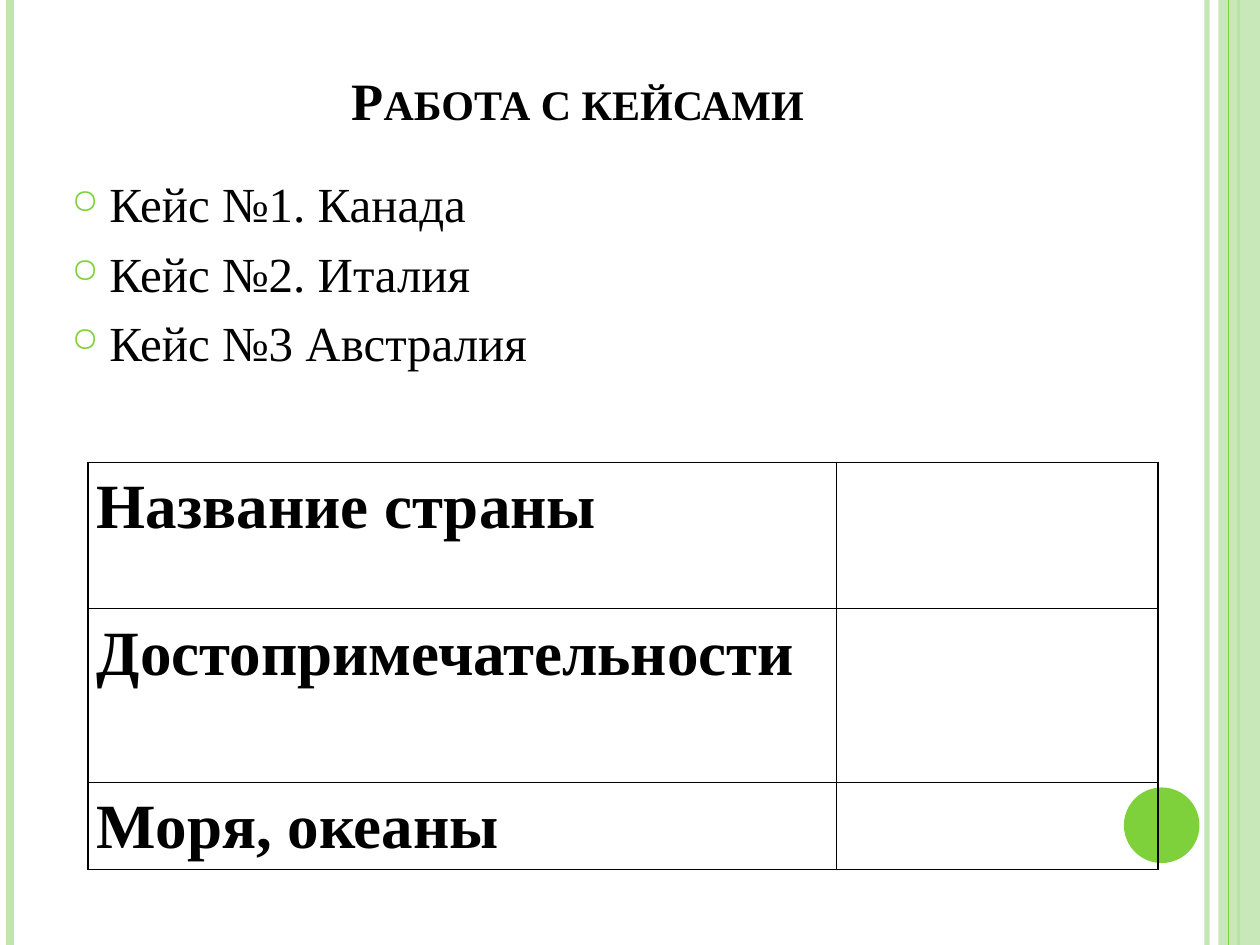
from lxml.etree import SubElement
from pptx import Presentation
from pptx.dml.color import RGBColor
from pptx.enum.shapes import MSO_CONNECTOR as Connector, MSO_SHAPE as Shape
from pptx.enum.text import MSO_ANCHOR as Anchor, PP_ALIGN as Align
from pptx.oxml.ns import qn
from pptx.util import Inches, Pt

WIDTH, HEIGHT = Inches(10), Inches(7.5)
BLACK = RGBColor(0x00, 0x00, 0x00)
GREEN = RGBColor(0x7F, 0xD1, 0x3B)
PALE = RGBColor(0xC0, 0xE5, 0xAF)
FONT = "Times New Roman"
CASES = ["Кейс №1. Канада", "Кейс №2. Италия", "Кейс №3 Австралия"]
ROWS = [("Название страны", 1.16), ("Достопримечательности", 1.38), ("Моря, океаны", 0.69)]
COLUMNS = [5.94, 2.55]


def apply(target, formats):
    """Set each attribute in formats on the target."""
    for name, value in formats.items():
        setattr(target, name, value)


def add_node(parent, tag, **values):
    """Append a DrawingML element with the given attributes."""
    node = SubElement(parent, qn(f"a:{tag}"))
    for name, value in values.items():
        node.set(name, str(value))
    return node


def set_alpha(shape, percent):
    """Make the first colour of a shape partly transparent."""
    colour = next(shape._element.spPr.iter(qn("a:srgbClr")))
    add_node(colour, "alpha", val=percent * 1000)


def add_stripe(page, share, colour, weight, alpha=100):
    """Draw a full-height vertical line at a share of the width."""
    x = round(WIDTH * share)
    stripe = page.shapes.add_connector(Connector.STRAIGHT, x, 0, x, HEIGHT)
    stripe.line.color.rgb = colour
    stripe.line.width = Pt(weight)
    if alpha < 100:
        set_alpha(stripe, alpha)
    add_node(stripe._element.spPr, "effectLst")


def add_plain(page, kind, left, top, width, height, colour):
    """Draw a filled shape without outline or shadow."""
    shape = page.shapes.add_shape(kind, *map(Inches, (left, top, width, height)))
    shape.shadow.inherit = False
    shape.fill.solid()
    shape.fill.fore_color.rgb = colour
    shape.line.fill.background()
    return shape


def add_box(page, left, top, width, height, anchor):
    """Add a wrapping text box and return its text frame."""
    box = page.shapes.add_textbox(*map(Inches, (left, top, width, height)))
    apply(box.text_frame, {"word_wrap": True, "vertical_anchor": anchor})
    return box.text_frame


def write(para, text, size, bold=False, **formats):
    """Write one formatted run into a paragraph."""
    apply(para, formats)
    span = para.add_run()
    span.text = text
    apply(span.font, {"name": FONT, "size": Pt(size), "bold": bold})
    span.font.color.rgb = BLACK
    return span


def add_bullet(para):
    """Give a paragraph a hanging green ring bullet."""
    props = para._p.get_or_add_pPr()
    props.set("marL", str(Inches(0.3)))
    props.set("indent", str(-Inches(0.3)))
    add_node(add_node(props, "buClr"), "srgbClr", val=GREEN)
    add_node(props, "buSzPct", val=70000)
    add_node(props, "buChar", char="○")


def frame_cell(cell):
    """Outline a cell in black and leave it unfilled."""
    props = cell._tc.get_or_add_tcPr()
    for side in "LRTB":
        edge = add_node(props, f"ln{side}", w=Pt(1))
        add_node(add_node(edge, "solidFill"), "srgbClr", val=BLACK)
    cell.fill.background()
    apply(cell, {"margin_left": Inches(0.07), "margin_right": Inches(0.07),
                 "margin_top": 0, "margin_bottom": 0})


def add_case_table(page):
    """Add the table that is filled in for each country."""
    size = (sum(COLUMNS), sum(height for _, height in ROWS))
    table = page.shapes.add_table(len(ROWS), len(COLUMNS), Inches(0.7), Inches(3.67),
                                  *map(Inches, size)).table
    apply(table, {"first_row": False, "horz_banding": False})
    for column, width in zip(table.columns, COLUMNS):
        column.width = Inches(width)
    for row, (label, height) in zip(table.rows, ROWS):
        row.height = Inches(height)
        for cell in row.cells:
            frame_cell(cell)
        write(row.cells[0].text_frame.paragraphs[0], label, 36, True,
              alignment=Align.JUSTIFY, line_spacing=1.15)


def add_decor(page):
    """Draw the green stripes, side band and circle."""
    add_stripe(page, 0.958, PALE, 3, 93)
    add_stripe(page, 0.008, PALE, 4.5)
    add_stripe(page, 0.983, GREEN, 1.5)
    set_alpha(add_plain(page, Shape.RECTANGLE, 9.67, 0, 0.33, 7.5, PALE), 87)
    add_stripe(page, 0.975, GREEN, 0.75)
    add_plain(page, Shape.OVAL, 8.92, 6.25, 0.6, 0.6, GREEN)


def main():
    """Build and save the slide."""
    deck = Presentation()
    apply(deck, {"slide_width": WIDTH, "slide_height": HEIGHT})
    page = deck.slides.add_slide(deck.slide_layouts[6])
    add_decor(page)
    title = add_box(page, 0.5, 0.3, 8.17, 0.79, Anchor.BOTTOM)
    span = write(title.paragraphs[0], "Работа с кейсами", 30, True, alignment=Align.CENTER)
    span._r.get_or_add_rPr().set("cap", "small")
    body = add_box(page, 0.47, 1.33, 8.17, 5.33, Anchor.TOP)
    for index, case in enumerate(CASES):
        para = body.add_paragraph() if index else body.paragraphs[0]
        write(para, case, 28, space_before=Pt(6))
        add_bullet(para)
    add_case_table(page)
    deck.save("out.pptx")


if __name__ == "__main__":
    main()
